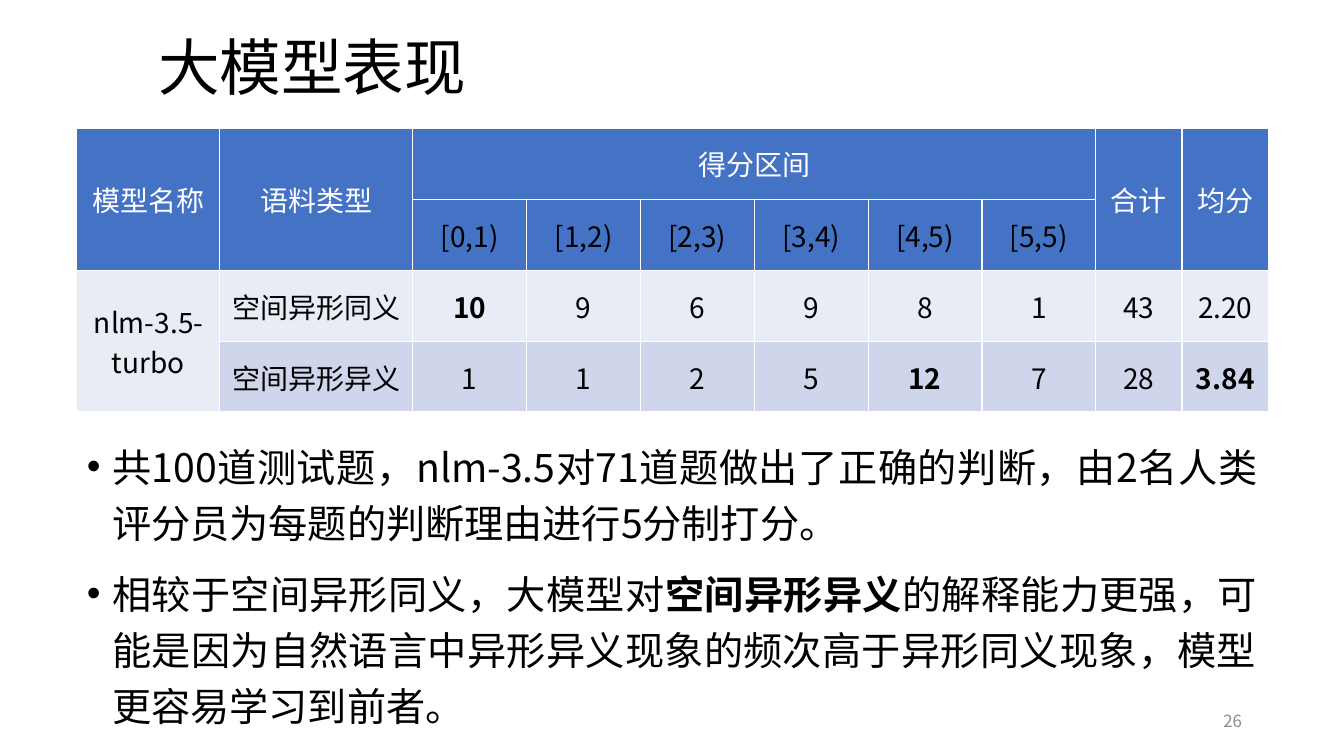
from lxml.etree import SubElement
from pptx import Presentation
from pptx.dml.color import RGBColor
from pptx.enum.text import MSO_ANCHOR, MSO_AUTO_SIZE, PP_ALIGN
from pptx.oxml.ns import qn
from pptx.util import Pt

FONT = "Noto Sans CJK SC"
BLACK = RGBColor(0x00, 0x00, 0x00)
WHITE = RGBColor(0xFF, 0xFF, 0xFF)
GRAY = RGBColor(0x8C, 0x8C, 0x8C)
BLUE = RGBColor(0x44, 0x72, 0xC4)
PALE = RGBColor(0xE9, 0xEB, 0xF5)
LIGHT = RGBColor(0xCF, 0xD5, 0xEA)

TITLE = "大模型表现"
PAGE_NUMBER = "26"
SCORE_ROWS = [
    ["模型名称", "语料类型", "得分区间", "", "", "", "", "", "合计", "均分"],
    ["", "", "[0,1)", "[1,2)", "[2,3)", "[3,4)", "[4,5)", "[5,5)", "", ""],
    ["nlm-3.5-turbo", "空间异形同义", "10", "9", "6", "9", "8", "1", "43", "2.20"],
    ["", "空间异形异义", "1", "1", "2", "5", "12", "7", "28", "3.84"],
]
ROW_FILLS = [BLUE, BLUE, PALE, LIGHT]
ROW_HEIGHTS = [51, 51, 50.5, 50.5]
COLUMN_WIDTHS = [102, 138] + [81.3] * 6 + [61.7] * 2
MERGES = [(0, 0, 1, 0), (0, 1, 1, 1), (0, 2, 0, 7), (0, 8, 1, 8), (0, 9, 1, 9), (2, 0, 3, 0)]
BOLD_CELLS = {(2, 2), (3, 6), (3, 9)}
# Each bullet is a list of (text, bold) pairs.
BULLETS = [
    [("共100道测试题，nlm-3.5对71道题做出了正确的判断，由2名人类评分员为每题的判断理由进行5分制打分。", False)],
    [("相较于空间异形同义，大模型对", False),
     ("空间异形异义", True),
     ("的解释能力更强，可能是因为自然语言中异形异义现象的频次高于异形同义现象，模型更容易学习到前者。", False)],
]
LEFT, WIDTH = 54.9, 850.4


def add_span(para, text, size, color, bold=False):
    span = para.add_run()
    span.text = text
    span.font.size = Pt(size)
    span.font.bold = bold
    span.font.color.rgb = color
    span.font.name = FONT
    SubElement(span.font._element, qn("a:ea"), typeface=FONT)


def place(box, left, top, width, height):
    box.left, box.top, box.width, box.height = Pt(left), Pt(top), Pt(width), Pt(height)


def add_borders(cell):
    properties = cell._tc.get_or_add_tcPr()
    for side in ("lnL", "lnR", "lnT", "lnB"):
        line = SubElement(properties, qn(f"a:{side}"), w=str(Pt(1)))
        SubElement(SubElement(line, qn("a:solidFill")), qn("a:srgbClr"), val=str(WHITE))


def add_title(page):
    box = page.shapes.title
    place(box, 105.8, 17.3, 748.8, 66.2)
    box.text_frame.auto_size = MSO_AUTO_SIZE.NONE
    box.text_frame.vertical_anchor = MSO_ANCHOR.MIDDLE
    para = box.text_frame.paragraphs[0]
    para.alignment = PP_ALIGN.LEFT
    para.line_spacing = 0.9
    add_span(para, TITLE, 44, BLACK)


def add_scores(page):
    frame = page.shapes.add_table(len(ROW_HEIGHTS), len(COLUMN_WIDTHS), Pt(LEFT), Pt(91.4),
                                  Pt(WIDTH), Pt(sum(ROW_HEIGHTS)))
    table = frame.table
    for column, width in zip(table.columns, COLUMN_WIDTHS):
        column.width = Pt(width)
    for row, height in zip(table.rows, ROW_HEIGHTS):
        row.height = Pt(height)
    for r, texts in enumerate(SCORE_ROWS):
        for c, text in enumerate(texts):
            cell = table.cell(r, c)
            add_borders(cell)
            cell.fill.solid()
            cell.fill.fore_color.rgb = ROW_FILLS[r]
            cell.vertical_anchor = MSO_ANCHOR.MIDDLE
            if r >= 2 and c >= 2:
                cell.margin_left = cell.margin_right = Pt(5)
                cell.margin_top = cell.margin_bottom = 0
            if text:
                para = cell.text_frame.paragraphs[0]
                para.alignment = PP_ALIGN.CENTER
                add_span(para, text, 20, WHITE if r == 0 else BLACK, (r, c) in BOLD_CELLS)
    for top, left, bottom, right in MERGES:
        table.cell(top, left).merge(table.cell(bottom, right))


def add_bullets(page):
    box = page.placeholders[1]
    place(box, LEFT, 306, WIDTH, 216.7)
    frame = box.text_frame
    frame.auto_size = MSO_AUTO_SIZE.NONE
    for index, spans in enumerate(BULLETS):
        para = frame.add_paragraph() if index else frame.paragraphs[0]
        para.alignment = PP_ALIGN.JUSTIFY
        para.line_spacing = 1.2
        para.space_before = Pt(10)
        properties = para._p.get_or_add_pPr()
        properties.set("marL", str(Pt(18)))
        properties.set("indent", str(Pt(-18)))
        for text, bold in spans:
            add_span(para, text, 28, BLACK, bold)


def add_page_number(page):
    box = page.shapes.add_textbox(Pt(678.2), Pt(500.4), Pt(216), Pt(28.8))
    box.text_frame.word_wrap = True
    box.text_frame.vertical_anchor = MSO_ANCHOR.MIDDLE
    para = box.text_frame.paragraphs[0]
    para.alignment = PP_ALIGN.RIGHT
    add_span(para, PAGE_NUMBER, 12, GRAY)


def main():
    deck = Presentation()
    deck.slide_width, deck.slide_height = Pt(960), Pt(540)
    page = deck.slides.add_slide(deck.slide_layouts[1])
    add_title(page)
    add_scores(page)
    add_bullets(page)
    add_page_number(page)
    deck.save("out.pptx")


if __name__ == "__main__":
    main()
